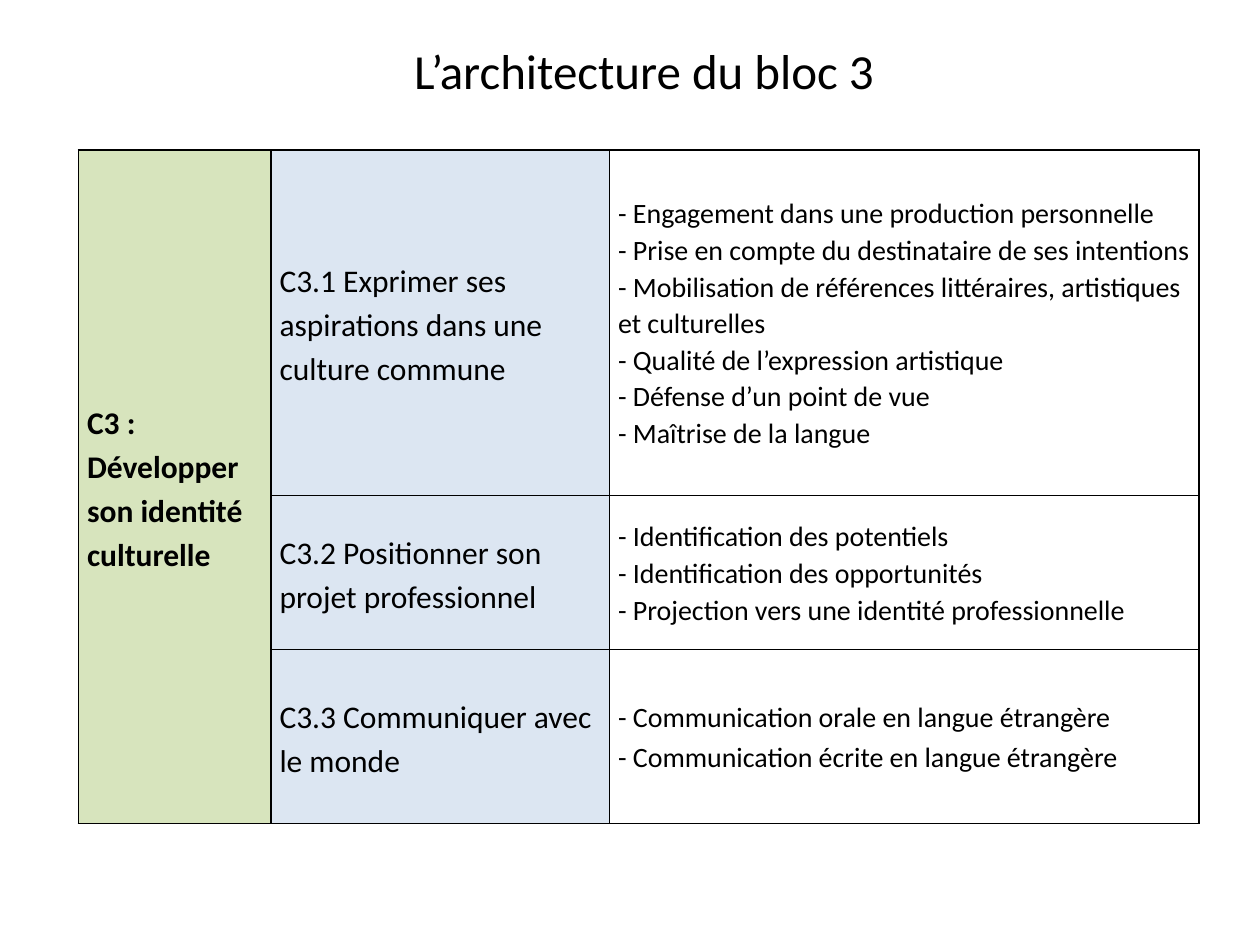
from dataclasses import dataclass

import pptx
import pptx.dml.color
import pptx.enum.text
import pptx.oxml
import pptx.oxml.ns
import pptx.util
from pptx.table import Table, _Cell

Pt = pptx.util.Pt
RGB = pptx.dml.color.RGBColor


@dataclass(frozen=True)
class Theme:
    font: str = "Calibri"
    ink: str = "000000"
    block_fill: str = "D7E4BD"
    skill_fill: str = "DCE6F2"
    title_size: float = 28
    heading_size: float = 18
    criteria_size: float = 16
    border_width: float = 1


@dataclass(frozen=True)
class CellStyle:
    size: float
    spacing: float
    fill: str | None = None
    bold: bool = False


@dataclass(frozen=True)
class Skill:
    heading: str
    criteria: tuple[str, ...]
    height: float


THEME = Theme()
BLOCK = CellStyle(THEME.heading_size, 1.15, THEME.block_fill, bold=True)
SKILL = CellStyle(THEME.heading_size, 1.15, THEME.skill_fill)
CRITERIA = CellStyle(THEME.criteria_size, 1.07)

TITLE = "L’architecture du bloc 3"
BLOCK_NAME = "C3 : Développer son identité culturelle"
SKILLS = (
    Skill("C3.1 Exprimer ses aspirations dans une culture commune", (
        "Engagement dans une production personnelle",
        "Prise en compte du destinataire de ses intentions",
        "Mobilisation de références littéraires, artistiques et culturelles",
        "Qualité de l’expression artistique",
        "Défense d’un point de vue",
        "Maîtrise de la langue",
    ), 197.5),
    Skill("C3.2 Positionner son projet professionnel", (
        "Identification des potentiels",
        "Identification des opportunités",
        "Projection vers une identité professionnelle",
    ), 88),
    Skill("C3.3 Communiquer avec le monde", (
        "Communication orale en langue étrangère",
        "Communication écrite en langue étrangère",
    ), 91.5),
)
COLUMN_WIDTHS = (110, 193.5, 337)


def format_text(frame, size: float, bold: bool = False) -> None:
    for paragraph in frame.paragraphs:
        for run in paragraph.runs:
            run.font.name = THEME.font
            run.font.size = Pt(size)
            run.font.bold = bold
            run.font.color.rgb = RGB.from_string(THEME.ink)


def add_borders(cell: _Cell) -> None:
    """Put a solid line on all four sides, ahead of the fill as the schema asks."""
    properties = cell._tc.get_or_add_tcPr()
    for position, side in enumerate("LRTB"):
        properties.insert(position, pptx.oxml.parse_xml(
            f'<a:ln{side} {pptx.oxml.ns.nsdecls("a")} w="{Pt(THEME.border_width)}">'
            f'<a:solidFill><a:srgbClr val="{THEME.ink}"/></a:solidFill></a:ln{side}>'))


def fill_cell(cell: _Cell, lines: tuple[str, ...], style: CellStyle) -> None:
    cell.margin_left = cell.margin_right = Pt(5)
    cell.margin_top = cell.margin_bottom = Pt(0)
    cell.vertical_anchor = pptx.enum.text.MSO_ANCHOR.MIDDLE
    if style.fill:
        cell.fill.solid()
        cell.fill.fore_color.rgb = RGB.from_string(style.fill)
    else:
        cell.fill.background()
    cell.text_frame.text = "\n".join(lines)
    for paragraph in cell.text_frame.paragraphs:
        paragraph.line_spacing = style.spacing
    format_text(cell.text_frame, style.size, style.bold)


def add_title(slide) -> None:
    title = slide.shapes.add_textbox(Pt(119), Pt(19.5), Pt(498), Pt(42.5)).text_frame
    title.word_wrap = True
    title.text = TITLE
    title.paragraphs[0].alignment = pptx.enum.text.PP_ALIGN.CENTER
    format_text(title, THEME.title_size)


def add_skill_table(slide) -> Table:
    table = slide.shapes.add_table(
        len(SKILLS), len(COLUMN_WIDTHS), Pt(44.75), Pt(85.75),
        Pt(sum(COLUMN_WIDTHS)), Pt(sum(skill.height for skill in SKILLS))).table
    table.first_row = table.horz_banding = False
    for column, width in zip(table.columns, COLUMN_WIDTHS):
        column.width = Pt(width)
    for index, skill in enumerate(SKILLS):
        table.rows[index].height = Pt(skill.height)
        fill_cell(table.cell(index, 0), (BLOCK_NAME,) if index == 0 else (), BLOCK)
        fill_cell(table.cell(index, 1), (skill.heading,), SKILL)
        fill_cell(table.cell(index, 2), tuple(f"- {line}" for line in skill.criteria), CRITERIA)
    for cell in table.iter_cells():
        add_borders(cell)
    table.cell(0, 0).merge(table.cell(len(SKILLS) - 1, 0))
    closing_criterion = table.cell(len(SKILLS) - 1, 2).text_frame.paragraphs[-1]
    closing_criterion.line_spacing = SKILL.spacing
    return table


def main() -> None:
    deck = pptx.Presentation()
    deck.slide_width, deck.slide_height = Pt(720), Pt(540)
    slide = deck.slides.add_slide(deck.slide_layouts[6])
    add_title(slide)
    add_skill_table(slide)
    deck.save("out.pptx")


if __name__ == "__main__":
    main()
